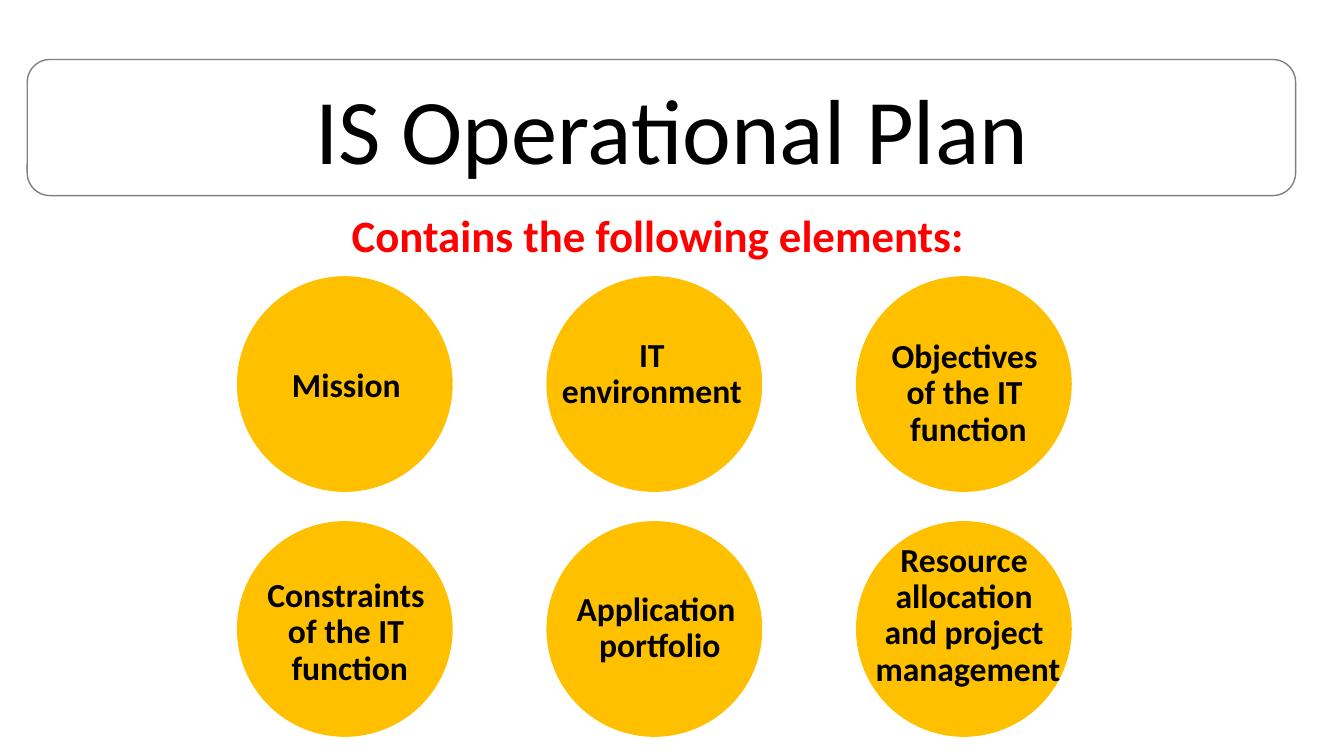
from dataclasses import dataclass

import pptx
import pptx.dml.color
import pptx.enum.shapes
import pptx.enum.text
import pptx.util
from pptx.util import Inches

FONT = "Calibri"
BLACK, WHITE, GREY, RED, AMBER = "000000", "FFFFFF", "808080", "FF0000", "FFC000"

# Grid of circles
COLUMNS = 3
GRID_LEFT, GRID_TOP = 2.35, 2.74
STEP_X, STEP_Y = 3.07, 2.43
DIAMETER = 2.14

CENTER = pptx.enum.text.PP_ALIGN.CENTER
SHAPE = pptx.enum.shapes.MSO_SHAPE


@dataclass
class Element:
    lines: list[str]
    box: tuple[float, float, float, float]  # left, top, width, height of the label
    indented: bool = True


ELEMENTS = [
    Element(["Mission"], (2.79, 3.56, 1.29, 0.5), indented=False),
    Element(["IT", "environment"], (4.96, 3.31, 2.51, 0.83)),
    Element(["Objectives ", "of the IT ", "function"], (8.23, 3.32, 2.25, 1.19)),
    Element(["Constraints ", "of the IT ", "function"], (2.04, 5.69, 2.36, 1.19)),
    Element(["Application ", "portfolio"], (5.11, 5.83, 2.37, 0.83)),
    Element(["Resource ", "allocation ", "and project ", "management"],
            (8.07, 5.34, 2.56, 1.56)),
]


def color(hex_code: str) -> pptx.dml.color.RGBColor:
    return pptx.dml.color.RGBColor.from_string(hex_code)


def add_run(p, text: str, size: int, hex_code: str, bold: bool = False) -> None:
    r = p.add_run()
    r.text = text
    r.font.name = FONT
    r.font.size = pptx.util.Pt(size)
    r.font.bold = bold
    r.font.color.rgb = color(hex_code)


def set_indent(p, left: float, first: float) -> None:
    pPr = p._p.get_or_add_pPr()
    pPr.set("marL", str(Inches(left)))
    pPr.set("indent", str(Inches(first)))


def add_shape(shapes, kind, box: tuple[float, float, float, float], fill: str):
    sp = shapes.add_shape(kind, *map(Inches, box))
    sp.shadow.inherit = False
    sp.fill.solid()
    sp.fill.fore_color.rgb = color(fill)
    sp.line.fill.background()
    return sp


def add_text_box(shapes, box: tuple[float, float, float, float]):
    tf = shapes.add_textbox(*map(Inches, box)).text_frame
    tf.word_wrap = False
    tf.auto_size = pptx.enum.text.MSO_AUTO_SIZE.SHAPE_TO_FIT_TEXT
    return tf


def add_title(s) -> None:
    sp = add_shape(s.shapes, SHAPE.ROUNDED_RECTANGLE, (0.27, 0.59, 12.58, 1.35), WHITE)
    sp.line.color.rgb = color(GREY)
    sp.line.width = pptx.util.Pt(1)
    tf = sp.text_frame
    tf.vertical_anchor = pptx.enum.text.MSO_ANCHOR.MIDDLE
    p = tf.paragraphs[0]
    p.alignment = CENTER
    set_indent(p, 0.38, -0.38)
    add_run(p, " IS Operational Plan", 66, BLACK)


def add_subtitle(s) -> None:
    p = add_text_box(s.shapes, (3.39, 2.07, 6.33, 0.59)).paragraphs[0]
    p.line_spacing = 0.9
    add_run(p, "Contains the following elements:", 32, RED, bold=True)


def add_element(s, index: int, element: Element) -> None:
    row, column = divmod(index, COLUMNS)
    group = s.shapes.add_group_shape()
    circle = (GRID_LEFT + column * STEP_X, GRID_TOP + row * STEP_Y, DIAMETER, DIAMETER)
    add_shape(group.shapes, SHAPE.OVAL, circle, AMBER)
    tf = add_text_box(group.shapes, element.box)
    for i, line in enumerate(element.lines):
        p = tf.add_paragraph() if i else tf.paragraphs[0]
        p.alignment = CENTER
        if element.indented:
            p.level = 1
            p.line_spacing = 0.9
            set_indent(p, 0.5, 0)
        add_run(p, line, 24, BLACK, bold=True)


def main() -> None:
    prs = pptx.Presentation()
    prs.slide_width, prs.slide_height = Inches(13.33), Inches(7.5)
    s = prs.slides.add_slide(prs.slide_layouts[6])
    add_title(s)
    add_subtitle(s)
    for index, element in enumerate(ELEMENTS):
        add_element(s, index, element)
    prs.save("out.pptx")


if __name__ == "__main__":
    main()
